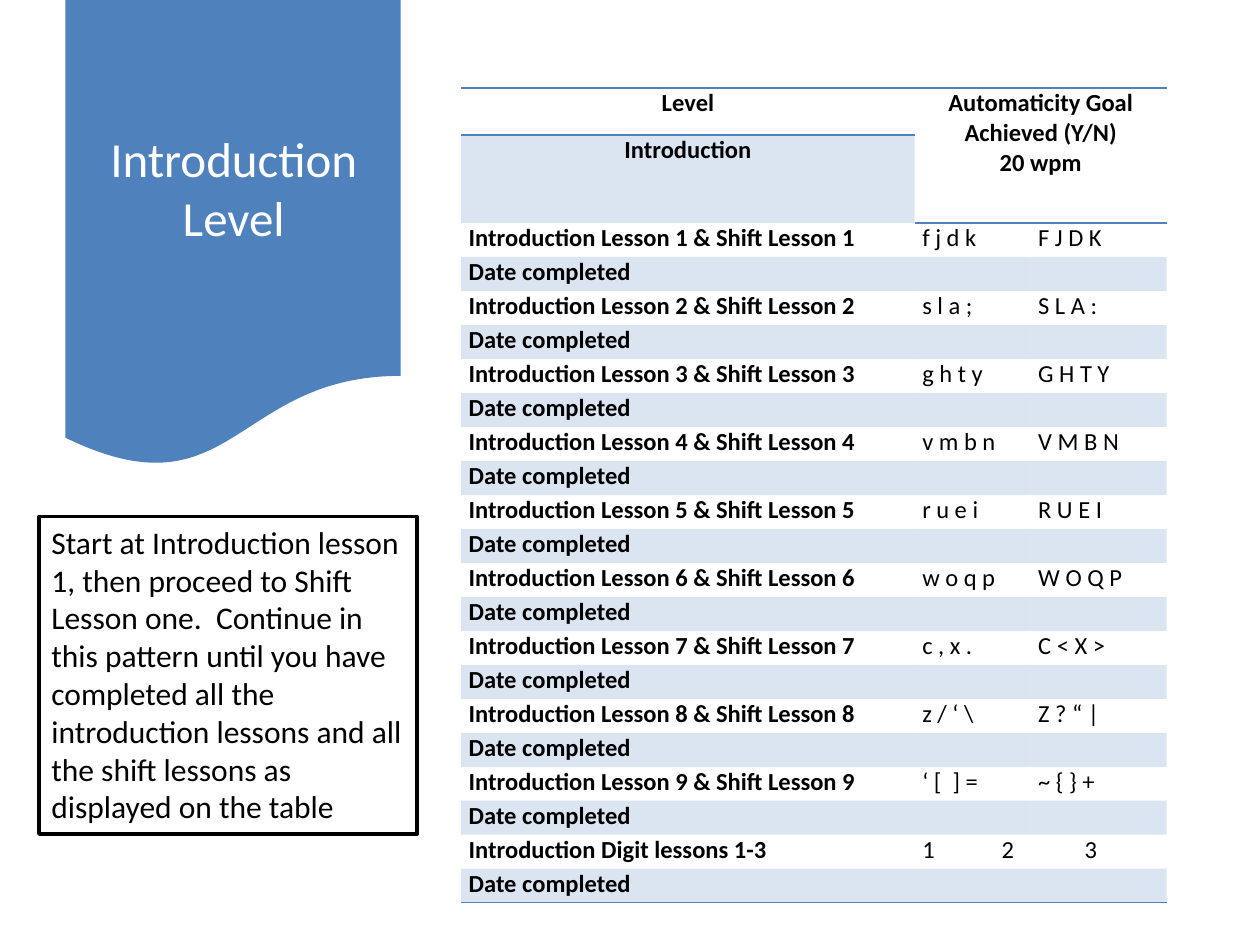
from lxml import etree
from pptx import Presentation
from pptx.dml.color import RGBColor
from pptx.enum.shapes import MSO_SHAPE
from pptx.enum.text import MSO_ANCHOR, PP_ALIGN
from pptx.oxml.ns import qn
from pptx.util import Inches, Pt

BLUE = RGBColor(0x4F, 0x81, 0xBD)
WHITE = RGBColor(0xFF, 0xFF, 0xFF)
BLACK = RGBColor(0, 0, 0)
FONT = "Calibri"
PLAIN_TABLE = "{2D5ABB26-0587-4C30-8999-92F81FD0307C}"

COLS = [3.6, 0.63, 0.29, 0.37, 0.71]
HEAD, ROW = 0.37, 0.27
KEYS = [
    ("f j d k", "F J D K"),
    ("s l a ;", "S L A :"),
    ("g h t y", "G H T Y"),
    ("v m b n", "V M B N"),
    ("r u e i", "R U E I"),
    ("w o q p", "W O Q P"),
    ("c , x .", "C < X >"),
    ("z / ‘ \\", "Z ? “ |"),
    ("‘ [  ] =", "~ { } +"),
]
NOTE = ("Start at Introduction lesson 1, then proceed to Shift Lesson one.\u00a0 "
        "Continue in this pattern until you have completed all the introduction "
        "lessons and all the shift lessons as displayed on the table")


def write(frame, *lines, size=14, color=BLACK, bold=False, align=PP_ALIGN.LEFT,
          anchor=MSO_ANCHOR.TOP):
    frame.word_wrap = True
    frame.vertical_anchor = anchor
    for i, line in enumerate(lines):
        para = frame.paragraphs[0] if i == 0 else frame.add_paragraph()
        para.alignment = align
        run = para.add_run()
        run.text = line
        font = run.font
        font.name, font.size, font.bold = FONT, Pt(size), bold
        font.color.rgb = color


def add_banner(slide, left, top, width, height):
    flag = slide.shapes.add_shape(MSO_SHAPE.FLOWCHART_DOCUMENT, left, top, width, height)
    flag.shadow.inherit = False
    flag.fill.solid()
    flag.fill.fore_color.rgb = BLUE
    flag.line.fill.background()
    # Title over the banner
    title = slide.shapes.add_textbox(left + Inches(0.17), top + Inches(0.19),
                                     width - Inches(0.33), Inches(2.59))
    write(title.text_frame, "Introduction Level", size=28, color=WHITE,
          align=PP_ALIGN.CENTER, anchor=MSO_ANCHOR.MIDDLE)


def add_note(slide, left, top, width, height):
    box = slide.shapes.add_shape(MSO_SHAPE.RECTANGLE, left, top, width, height)
    box.shadow.inherit = False
    box.fill.solid()
    box.fill.fore_color.rgb = WHITE
    box.line.color.rgb = BLACK
    box.line.width = Pt(2)
    write(box.text_frame, NOTE, size=18)


def set_cell(cell):
    cell.margin_left = cell.margin_right = Inches(0.06)
    cell.margin_top = cell.margin_bottom = 0
    cell.fill.background()
    # Keep empty cells as low as the written ones
    para = cell.text_frame.paragraphs[0]
    etree.SubElement(para._p, qn("a:endParaRPr"), sz="1400")


def tint(cell):
    cell.fill.solid()
    cell.fill.fore_color.rgb = BLUE
    color = cell._tc.tcPr.find(".//" + qn("a:srgbClr"))
    etree.SubElement(color, qn("a:alpha"), val="20000")


def rule(cell, side):
    line = etree.Element(qn("a:ln" + side), w=str(Pt(1)))
    fill = etree.SubElement(line, qn("a:solidFill"))
    etree.SubElement(fill, qn("a:srgbClr"), val=str(BLUE))
    props = cell._tc.get_or_add_tcPr()
    props.insert(len(props.findall(qn("a:lnT"))), line)


def add_table(slide, left, top, width):
    count = 2 + 2 * (len(KEYS) + 1)
    height = Inches(2 * HEAD + (count - 2) * ROW)
    grid = slide.shapes.add_table(count, len(COLS), left, top, width, height).table
    grid.first_row = grid.horz_banding = False
    grid._tbl.tblPr.find(qn("a:tableStyleId")).text = PLAIN_TABLE
    for col, size in zip(grid.columns, COLS):
        col.width = Inches(size)
    for i, row in enumerate(grid.rows):
        row.height = Inches(HEAD if i < 2 else ROW)
    for cell in grid.iter_cells():
        set_cell(cell)

    def put(row, col, *lines, **form):
        write(grid.cell(row, col).text_frame, *lines, **form)

    def join(row, col, end_row, end_col):
        grid.cell(row, col).merge(grid.cell(end_row, end_col))

    # Heading
    head = dict(bold=True, align=PP_ALIGN.CENTER)
    put(0, 0, "Level", **head)
    put(0, 1, "Automaticity Goal Achieved (Y/N)", "20 wpm", **head)
    put(1, 0, "Introduction", **head)
    tint(grid.cell(1, 0))
    join(0, 1, 1, 4)

    # Lesson rows, each with its date row
    names = [f"Introduction Lesson {n} & Shift Lesson {n}"
             for n in range(1, len(KEYS) + 1)]
    names.append("Introduction Digit lessons 1-3")
    for i, (name, keys) in enumerate(zip(names, KEYS + [("1", "2", "3")])):
        row = 2 + 2 * i
        spans = [(1, 2), (3, 4)] if len(keys) == 2 else [(1, 1), (2, 3), (4, 4)]
        put(row, 0, name, bold=True)
        put(row + 1, 0, "Date completed", bold=True)
        for col in range(len(COLS)):
            tint(grid.cell(row + 1, col))
        for key, (start, end) in zip(keys, spans):
            put(row, start, key)
            if start < end:
                join(row, start, row, end)
                join(row + 1, start, row + 1, end)

    # Rules above, under the heading and below
    for col in range(len(COLS)):
        rule(grid.cell(0, col), "T")
        rule(grid.cell(0 if col < 2 else 1, col), "B")
        rule(grid.cell(count - 1, col), "B")
    rule(grid.cell(1, 1), "B")


def main():
    deck = Presentation()
    deck.slide_width, deck.slide_height = Inches(10), Inches(7.5)
    slide = deck.slides.add_slide(deck.slide_layouts[6])
    add_banner(slide, Inches(0.52), 0, Inches(2.66), Inches(3.72))
    add_table(slide, Inches(3.66), Inches(0.7), Inches(5.6))
    add_note(slide, Inches(0.31), Inches(4.1), Inches(3), Inches(2.52))
    deck.save("out.pptx")


if __name__ == "__main__":
    main()
